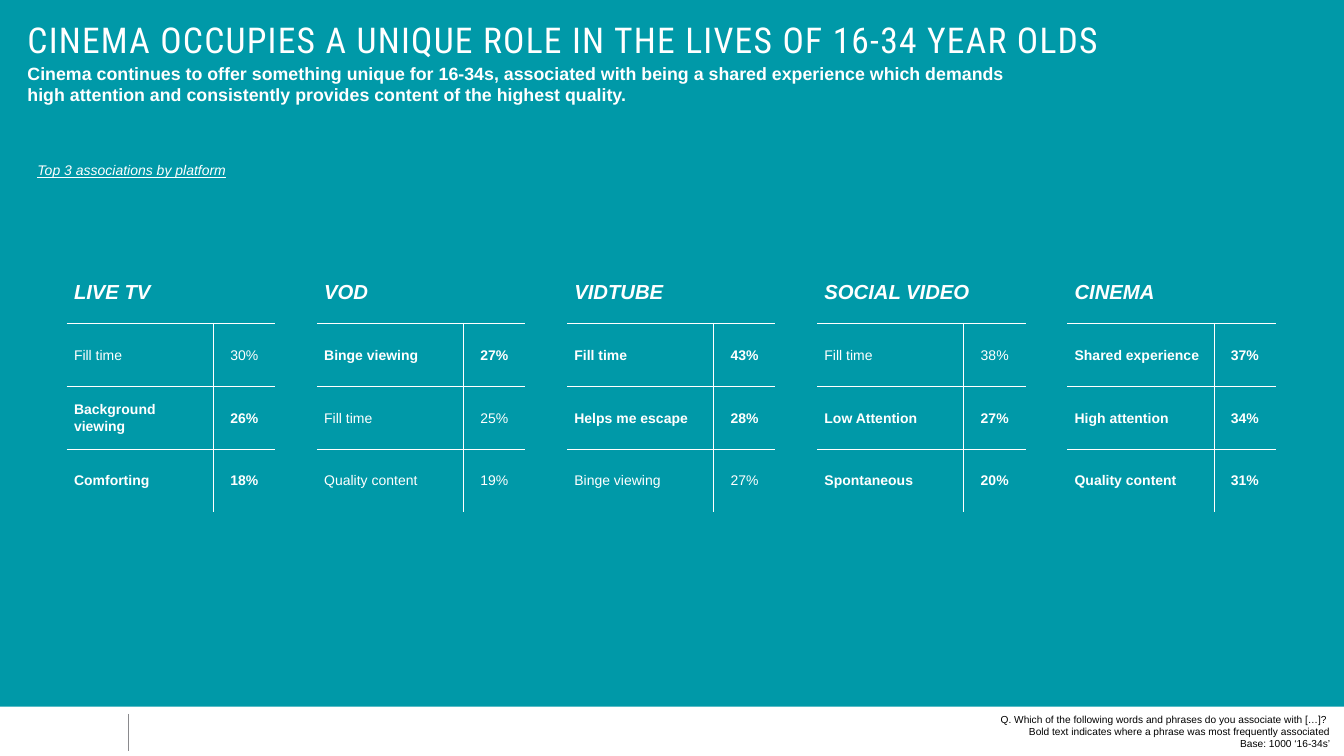
from lxml import etree
from pptx import Presentation
from pptx.dml.color import RGBColor
from pptx.enum.shapes import MSO_CONNECTOR, MSO_SHAPE
from pptx.enum.text import MSO_ANCHOR, PP_ALIGN
from pptx.oxml.ns import qn
from pptx.util import Pt

LEFT, CENTER, RIGHT = PP_ALIGN.LEFT, PP_ALIGN.CENTER, PP_ALIGN.RIGHT
TOP, MIDDLE = MSO_ANCHOR.TOP, MSO_ANCHOR.MIDDLE
RECTANGLE, STRAIGHT = MSO_SHAPE.RECTANGLE, MSO_CONNECTOR.STRAIGHT

TEAL = RGBColor(0x00, 0x99, 0xA8)
WHITE = RGBColor(0xFF, 0xFF, 0xFF)
BLACK = RGBColor(0x00, 0x00, 0x00)
GREY = RGBColor(0x8A, 0x8A, 0x8D)

SLIDE_WIDTH, SLIDE_HEIGHT = 1058.4, 595.44
PANEL_HEIGHT = 556.6
TABLE_LEFT, TABLE_TOP, TABLE_PITCH = 52.5, 205.2, 197
COLUMN_WIDTHS = (115.6, 48.6)
ROW_HEIGHT = 49.5
CELL_INSET = 5.8

# Platform, then association, share and whether it is most frequent here
PLATFORMS = [
    ("LIVE TV", [("Fill time", "30%", False),
                 ("Background viewing", "26%", True),
                 ("Comforting", "18%", True)]),
    ("VOD", [("Binge viewing", "27%", True),
             ("Fill time", "25%", False),
             ("Quality content", "19%", False)]),
    ("VIDTUBE", [("Fill time", "43%", True),
                 ("Helps me escape", "28%", True),
                 ("Binge viewing", "27%", False)]),
    ("SOCIAL VIDEO", [("Fill time", "38%", False),
                      ("Low Attention", "27%", True),
                      ("Spontaneous", "20%", True)]),
    ("CINEMA", [("Shared experience", "37%", True),
                ("High attention", "34%", True),
                ("Quality content", "31%", True)]),
]


def write_text(frame, *lines, size, color=WHITE, font="Arial", bold=False,
               italic=False, underline=False, align=LEFT, line_spacing=1.0,
               tracking=None):
    for index, line in enumerate(lines):
        paragraph = frame.add_paragraph() if index else frame.paragraphs[0]
        paragraph.alignment = align
        paragraph.line_spacing = line_spacing
        run = paragraph.add_run()
        run.text = line
        run.font.name = font
        run.font.size = Pt(size)
        run.font.bold = bold
        run.font.italic = italic
        run.font.underline = underline
        run.font.color.rgb = color
        if tracking:
            run.font._element.set("spc", str(tracking * 100))


def prepare_frame(frame, anchor=TOP):
    frame.word_wrap = True
    frame.vertical_anchor = anchor
    frame.margin_left = frame.margin_right = 0
    frame.margin_top = frame.margin_bottom = 0


def add_text(slide, left, top, width, height, *lines, **text_format):
    frame = slide.shapes.add_textbox(
        Pt(left), Pt(top), Pt(width), Pt(height)).text_frame
    prepare_frame(frame)
    write_text(frame, *lines, **text_format)


def add_title(slide, text):
    title = slide.shapes.title
    title.left, title.top = Pt(21.6), Pt(14.4)
    title.width, title.height = Pt(978), Pt(32.4)
    prepare_frame(title.text_frame, MIDDLE)
    write_text(title.text_frame, text, size=28, font="Roboto Condensed",
               tracking=1)


def add_background_panel(slide):
    panel = slide.shapes.add_shape(
        RECTANGLE, 0, 0, Pt(SLIDE_WIDTH), Pt(PANEL_HEIGHT))
    panel.shadow.inherit = False
    panel.fill.solid()
    panel.fill.fore_color.rgb = TEAL
    panel.line.fill.background()
    # Send behind the title
    slide.shapes._spTree.insert(2, panel._element)


def set_borders(cell, ruled_sides):
    properties = cell._tc.get_or_add_tcPr()
    for index, side in enumerate("LRTB"):
        border = etree.Element(qn(f"a:ln{side}"), w=str(Pt(1)))
        if side in ruled_sides:
            fill = etree.SubElement(border, qn("a:solidFill"))
            etree.SubElement(fill, qn("a:srgbClr"), val=str(WHITE))
        else:
            etree.SubElement(border, qn("a:noFill"))
        properties.insert(index, border)


def fill_cell(cell, text, ruled_sides, **text_format):
    cell.fill.background()
    cell.vertical_anchor = MIDDLE
    cell.margin_left = cell.margin_right = Pt(CELL_INSET)
    cell.margin_top = cell.margin_bottom = 0
    set_borders(cell, ruled_sides)
    if text:
        write_text(cell.text_frame, text, line_spacing=1.07, **text_format)


def add_platform_table(slide, left, platform, associations):
    row_count = len(associations) + 1
    table = slide.shapes.add_table(
        row_count, 2, Pt(left), Pt(TABLE_TOP), Pt(sum(COLUMN_WIDTHS)),
        Pt(row_count * ROW_HEIGHT)).table
    table.first_row = table.horz_banding = False
    for column, width in zip(table.columns, COLUMN_WIDTHS):
        column.width = Pt(width)
    for row in table.rows:
        row.height = Pt(ROW_HEIGHT)

    # Platform heading
    table.cell(0, 0).merge(table.cell(0, 1))
    fill_cell(table.cell(0, 0), platform, "B", size=16, bold=True, italic=True)
    fill_cell(table.cell(0, 1), "", "B")

    # Top associations
    for row, (phrase, share, bold) in enumerate(associations, start=1):
        rules = "T" if row == len(associations) else "TB"
        fill_cell(table.cell(row, 0), phrase, rules + "R", size=11, bold=bold)
        fill_cell(table.cell(row, 1), share, rules + "L", size=11, bold=bold,
                  align=CENTER)


def add_footer_rule(slide):
    rule = slide.shapes.add_connector(
        STRAIGHT, Pt(101), Pt(562.3), Pt(101), Pt(591.8))
    rule.line.color.rgb = GREY
    rule.line.width = Pt(0.75)
    etree.SubElement(rule._element.spPr, qn("a:effectLst"))


def main():
    presentation = Presentation()
    presentation.slide_width = Pt(SLIDE_WIDTH)
    presentation.slide_height = Pt(SLIDE_HEIGHT)
    slide = presentation.slides.add_slide(presentation.slide_layouts[5])

    # Heading area
    add_background_panel(slide)
    add_title(slide, "CINEMA OCCUPIES A UNIQUE ROLE IN THE LIVES OF "
                     "16-34 YEAR OLDS")
    add_text(slide, 21.6, 49, 791, 34,
             "Cinema continues to offer something unique for 16-34s, "
             "associated with being a shared experience which demands high "
             "attention and consistently provides content of the highest "
             "quality.", size=14, bold=True)
    add_text(slide, 29.5, 127.4, 436, 13.7, "Top 3 associations by platform",
             size=11, italic=True, underline=True)

    # One table per platform
    for index, (platform, associations) in enumerate(PLATFORMS):
        add_platform_table(slide, TABLE_LEFT + index * TABLE_PITCH,
                           platform, associations)

    # Footer
    add_footer_rule(slide)
    add_text(slide, 436.3, 561.6, 611.3, 28.8,
             "Q. Which of the following words and phrases do you associate "
             "with […]? ",
             "Bold text indicates where a phrase was most frequently "
             "associated",
             "Base: 1000 ‘16-34s’", size=8, color=BLACK, align=RIGHT)

    presentation.save("out.pptx")


if __name__ == "__main__":
    main()
